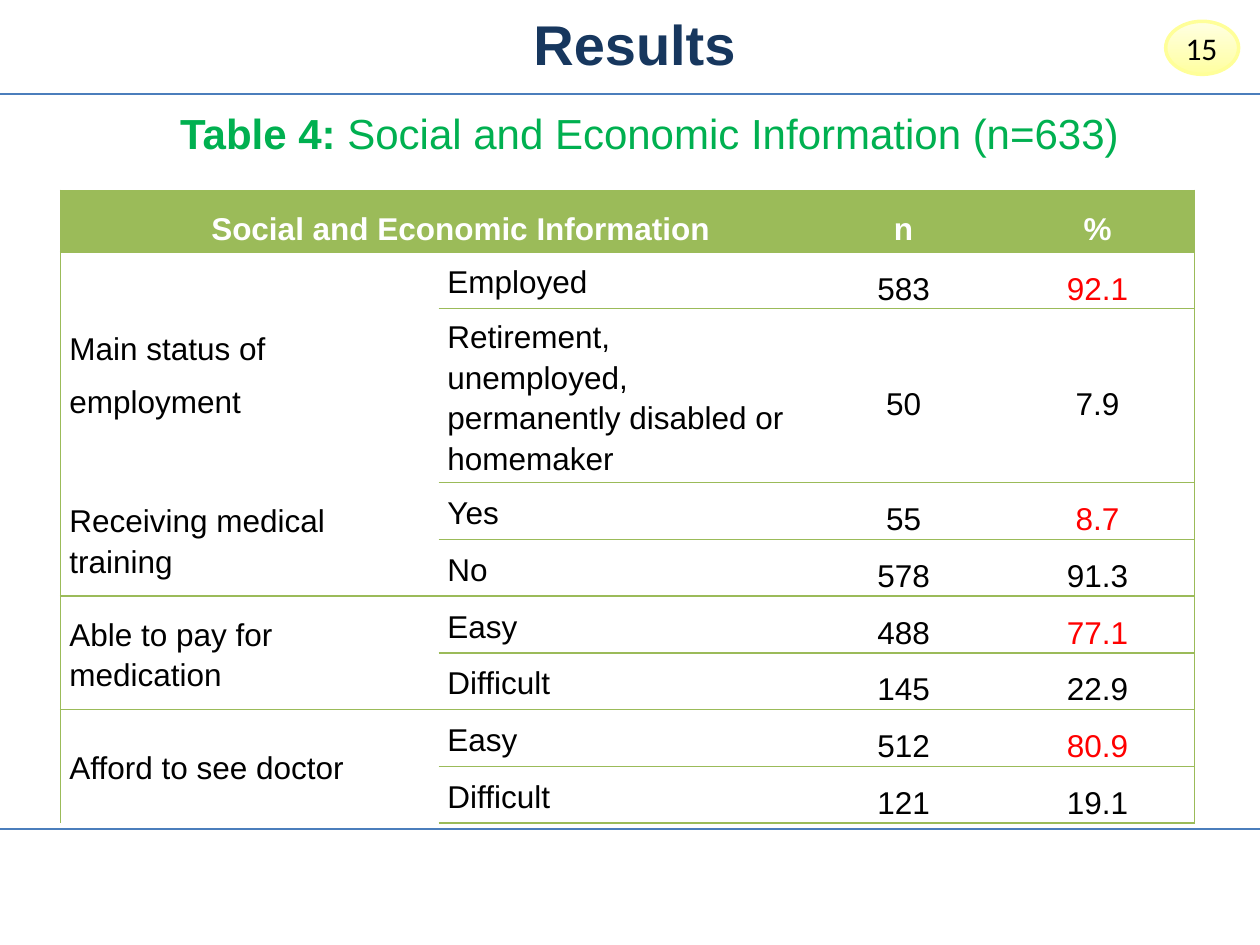
from lxml.etree import SubElement
from pptx import Presentation
from pptx.dml.color import RGBColor
from pptx.enum.shapes import MSO_CONNECTOR, MSO_SHAPE
from pptx.enum.text import MSO_ANCHOR, PP_ALIGN
from pptx.oxml.ns import qn
from pptx.util import Cm, Pt

# Content
TITLE = "Results "
CAPTION = ("Table 4: ", "Social and Economic Information (n=633)")
PAGE = "15"
HEADER = ("Social and Economic Information ", "n", "%")
GROUPS = [
    ("Main status of employment", [
        ("Employed", "583", "92.1"),
        ("Retirement, unemployed, permanently disabled or homemaker", "50", "7.9")]),
    ("Receiving medical training", [("Yes", "55", "8.7"), ("No", "578", "91.3")]),
    ("Able to pay for medication", [("Easy", "488", "77.1"), ("Difficult", "145", "22.9")]),
    ("Afford to see doctor", [("Easy", "512", "80.9"), ("Difficult", "121", "19.1")]),
]

# Layout and colours
COL_WIDTHS = (7.62, 7.42, 3.91, 3.91)
HEADER_H, ROW_H, TALL_H = 1.24, 1.02, 3.02
RULED_ROWS = (0, 4, 6, 8)  # rows whose lower rule crosses the first column
GREEN, WHITE, BLACK, RED, BLUE = "9BBB59", "FFFFFF", "000000", "FF0000", "4B7EBC"


def rgb(value):
    return RGBColor.from_string(value)


def write(p, text, size=18, color=BLACK, bold=False, font="Arial",
          align=PP_ALIGN.LEFT, spacing=None, before=0):
    p.alignment = align
    p.space_before = Pt(before)
    if spacing:
        p.line_spacing = spacing
    r = p.add_run()
    r.text = text
    r.font.size, r.font.bold, r.font.name = Pt(size), bold, font
    r.font.color.rgb = rgb(color)


def add_rule(s, y, width):
    line = s.shapes.add_connector(MSO_CONNECTOR.STRAIGHT, 0, Cm(y), Cm(25.4), Cm(y))
    line.line.color.rgb = rgb(BLUE)
    line.line.width = Pt(width)
    SubElement(line._element.spPr, qn("a:effectLst"))


def add_text_box(s, x, y, w, h):
    tf = s.shapes.add_textbox(Cm(x), Cm(y), Cm(w), Cm(h)).text_frame
    tf.word_wrap = True
    return tf.paragraphs[0]


def set_borders(cell, **sides):
    tcPr = cell._tc.get_or_add_tcPr()
    for side in "LRTB":
        ln = SubElement(tcPr, qn("a:ln" + side), w=str(Pt(1)))
        if sides[side]:
            fill = SubElement(ln, qn("a:solidFill"))
            SubElement(fill, qn("a:srgbClr"), val=GREEN)
        else:
            SubElement(ln, qn("a:noFill"))


def has_rule_below(row, col):
    return col > 0 or row in RULED_ROWS


def main():
    prs = Presentation()
    prs.slide_width, prs.slide_height = Cm(25.4), Cm(19.05)
    s = prs.slides.add_slide(prs.slide_layouts[5])

    # Rules and page badge
    add_rule(s, 1.9, 1)
    add_rule(s, 16.71, 0.75)
    sp = s.shapes.add_shape(MSO_SHAPE.OVAL, Cm(23.5), Cm(0.43), Cm(1.47), Cm(1.07))
    sp.shadow.inherit = False
    sp.fill.gradient()
    sp.fill.gradient_angle = 90
    for stop, color in zip(sp.fill.gradient_stops, ("FFFFA0", "FFFFE3")):
        stop.color.rgb = rgb(color)
    sp.line.color.rgb = rgb("FFFF99")
    sp.line.width = Pt(2)
    write(add_text_box(s, 23.65, 0.46, 1.35, 1.02), PAGE, font="Calibri")

    # Table grid
    n_rows = 1 + sum(len(rows) for _, rows in GROUPS)
    gf = s.shapes.add_table(n_rows, len(COL_WIDTHS), Cm(1.22), Cm(3.84), Cm(22.86), Cm(12.75))
    table = gf.table
    for col, width in zip(table.columns, COL_WIDTHS):
        col.width = Cm(width)
    for i, row in enumerate(table.rows):
        row.height = Cm({0: HEADER_H, 2: TALL_H}.get(i, ROW_H))
    gf.height = Cm(12.75)
    for i in range(n_rows):
        for j in range(len(COL_WIDTHS)):
            cell = table.cell(i, j)
            set_borders(cell, L=j == 0, R=j == len(COL_WIDTHS) - 1,
                        T=i == 0 or has_rule_below(i - 1, j), B=has_rule_below(i, j))
            cell.fill.solid()
            cell.fill.fore_color.rgb = rgb(WHITE if i else GREEN)
            cell.vertical_anchor = MSO_ANCHOR.MIDDLE
            cell.margin_left = cell.margin_right = Cm(0.18)
            cell.margin_top = cell.margin_bottom = 0

    # Table text
    number = dict(align=PP_ALIGN.CENTER, spacing=1.5, before=1)
    table.cell(0, 0).merge(table.cell(0, 1))
    for j, text in zip((0, 2, 3), HEADER):
        write(table.cell(0, j).text_frame.paragraphs[0], text, color=WHITE, bold=True, **number)
    heading = table.cell(0, 0).text_frame.paragraphs[0]
    heading._p.get_or_add_pPr().set("indent", str(Cm(1.27)))
    i = 1
    for g, (group, rows) in enumerate(GROUPS):
        top = table.cell(i, 0)
        top.merge(table.cell(i + len(rows) - 1, 0))
        loose = dict(spacing=1.5, before=1) if g == 0 else dict(spacing=1.15)
        write(top.text_frame.paragraphs[0], group, **loose)
        for k, (label, n, percent) in enumerate(rows):
            _, c_label, c_n, c_percent = [table.cell(i, j).text_frame.paragraphs[0]
                                          for j in range(4)]
            write(c_label, label, spacing=1.15)
            write(c_n, n, **number)
            write(c_percent, percent, color=BLACK if k else RED, **number)
            i += 1

    # Caption and title
    p = add_text_box(s, 1.22, 1.9, 23.75, 1.35)
    for text, bold in zip(CAPTION, (True, False)):
        write(p, text, size=24, color="00B050", bold=bold, align=PP_ALIGN.CENTER, spacing=1.15)
    title = s.shapes.title
    title.left, title.top, title.width, title.height = Cm(4.01), 0, Cm(17.88), Cm(1.9)
    tf = title.text_frame
    tf.vertical_anchor = MSO_ANCHOR.MIDDLE
    tf.margin_bottom = Cm(0.28)
    write(tf.paragraphs[0], TITLE, size=32, color="17375E", bold=True, align=PP_ALIGN.CENTER)

    prs.save("out.pptx")


if __name__ == "__main__":
    main()
